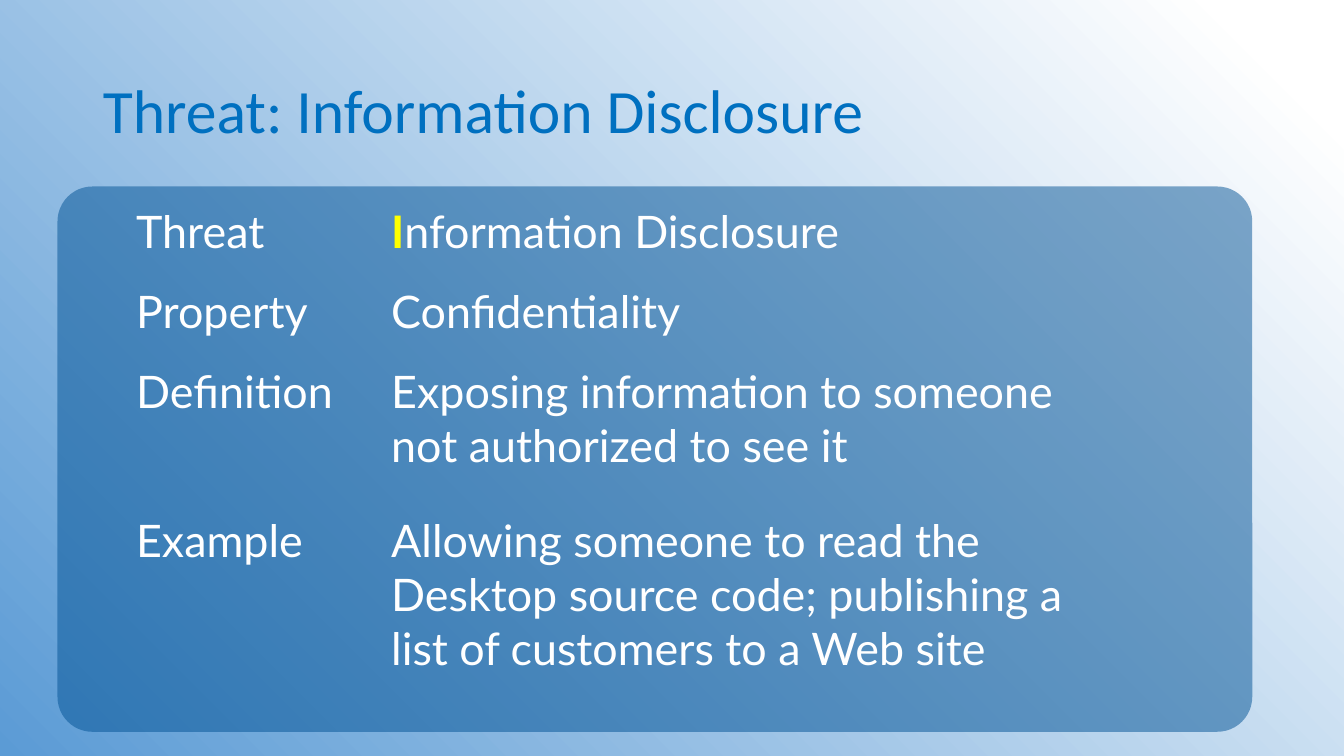
from dataclasses import dataclass

from lxml.etree import SubElement
from pptx import Presentation
from pptx.dml.color import RGBColor
from pptx.enum.shapes import MSO_SHAPE
from pptx.enum.text import MSO_ANCHOR, MSO_AUTO_SIZE, PP_ALIGN
from pptx.oxml.ns import qn
from pptx.slide import Slide
from pptx.table import Table, _Cell
from pptx.util import Inches, Pt


@dataclass(frozen=True)
class Theme:
    sky: RGBColor = RGBColor(0x5B, 0x9B, 0xD5)
    white: RGBColor = RGBColor(0xFF, 0xFF, 0xFF)
    panel: RGBColor = RGBColor(0x00, 0x51, 0x94)
    heading: RGBColor = RGBColor(0x00, 0x70, 0xC0)
    initial: RGBColor = RGBColor(0xFF, 0xFF, 0x00)
    heading_font: str = "Calibri"
    body_font: str = "Lato"
    heading_size: int = 44
    body_size: int = 32
    panel_opacity: int = 50


@dataclass(frozen=True)
class Aspect:
    label: str
    detail: str
    height: float
    initial: str = ""


THEME = Theme()
NO_STYLE_NO_GRID = "{2D5ABB26-0587-4C30-8999-92F81FD0307C}"
COLUMN_WIDTHS = (2.53, 7.33)
ASPECTS = (
    Aspect("Threat", "nformation Disclosure", 0.79, initial="I"),
    Aspect("Property", "Confidentiality", 0.79),
    Aspect("Definition", "Exposing information to someone not authorized to see it", 1.48),
    Aspect(
        "Example",
        "Allowing someone to read the Desktop source code; "
        "publishing a list of customers to a Web site",
        2.53,
    ),
)


def paint_background(slide: Slide) -> None:
    fill = slide.background.fill
    fill.gradient()
    fill.gradient_angle = 225
    stops = ((0.06, THEME.white), (1.0, THEME.sky))
    for stop, (position, color) in zip(fill.gradient_stops, stops):
        stop.position = position
        stop.color.rgb = color


def add_panel(slide: Slide) -> None:
    panel = slide.shapes.add_shape(
        MSO_SHAPE.ROUNDED_RECTANGLE, Inches(0.57), Inches(1.85), Inches(11.85), Inches(5.41)
    )
    panel.adjustments[0] = 0.064
    panel.shadow.inherit = False
    panel.line.fill.background()
    panel.fill.solid()
    panel.fill.fore_color.rgb = THEME.panel
    color = panel.fill._xPr.find(qn("a:solidFill")).find(qn("a:srgbClr"))
    SubElement(color, qn("a:alpha")).set("val", str(THEME.panel_opacity * 1000))


def set_title(slide: Slide, wording: str) -> None:
    title = slide.shapes.title
    title.left, title.top = Inches(0.92), Inches(0.4)
    title.width, title.height = Inches(11.5), Inches(1.45)
    frame = title.text_frame
    frame.text = wording
    frame.auto_size = MSO_AUTO_SIZE.NONE
    frame.vertical_anchor = MSO_ANCHOR.MIDDLE
    heading = frame.paragraphs[0]
    heading.alignment = PP_ALIGN.LEFT
    heading.line_spacing = 0.9
    font = heading.runs[0].font
    font.name, font.size = THEME.heading_font, Pt(THEME.heading_size)
    font.color.rgb = THEME.heading


def fill_cell(cell: _Cell, wording: str, initial: str = "") -> None:
    """Write the wording, led by a highlighted initial if one is given."""
    cell.fill.background()
    cell.margin_left = cell.margin_right = Inches(0.13)
    cell.margin_top = cell.margin_bottom = Inches(0.07)
    paragraph = cell.text_frame.paragraphs[0]
    for part, color in ((initial, THEME.initial), (wording, THEME.white)):
        if part:
            run = paragraph.add_run()
            run.text = part
            run.font.name, run.font.size = THEME.body_font, Pt(THEME.body_size)
            run.font.bold = part == initial
            run.font.color.rgb = color


def clear_style(table: Table) -> None:
    table.first_row = table.horz_banding = False
    table._tbl.tblPr.find(qn("a:tableStyleId")).text = NO_STYLE_NO_GRID


def add_aspects(slide: Slide) -> None:
    table = slide.shapes.add_table(
        len(ASPECTS), len(COLUMN_WIDTHS), Inches(1.22), Inches(1.96),
        Inches(sum(COLUMN_WIDTHS)), Inches(sum(aspect.height for aspect in ASPECTS)),
    ).table
    clear_style(table)
    for column, width in zip(table.columns, COLUMN_WIDTHS):
        column.width = Inches(width)
    for row, aspect in zip(table.rows, ASPECTS):
        row.height = Inches(aspect.height)
        label, detail = row.cells
        fill_cell(label, aspect.label)
        fill_cell(detail, aspect.detail, aspect.initial)


def main() -> None:
    deck = Presentation()
    deck.slide_width, deck.slide_height = Inches(13.33), Inches(7.5)
    slide = deck.slides.add_slide(deck.slide_layouts[5])
    paint_background(slide)
    add_panel(slide)
    set_title(slide, "Threat: Information Disclosure")
    add_aspects(slide)
    deck.save("out.pptx")


if __name__ == "__main__":
    main()
